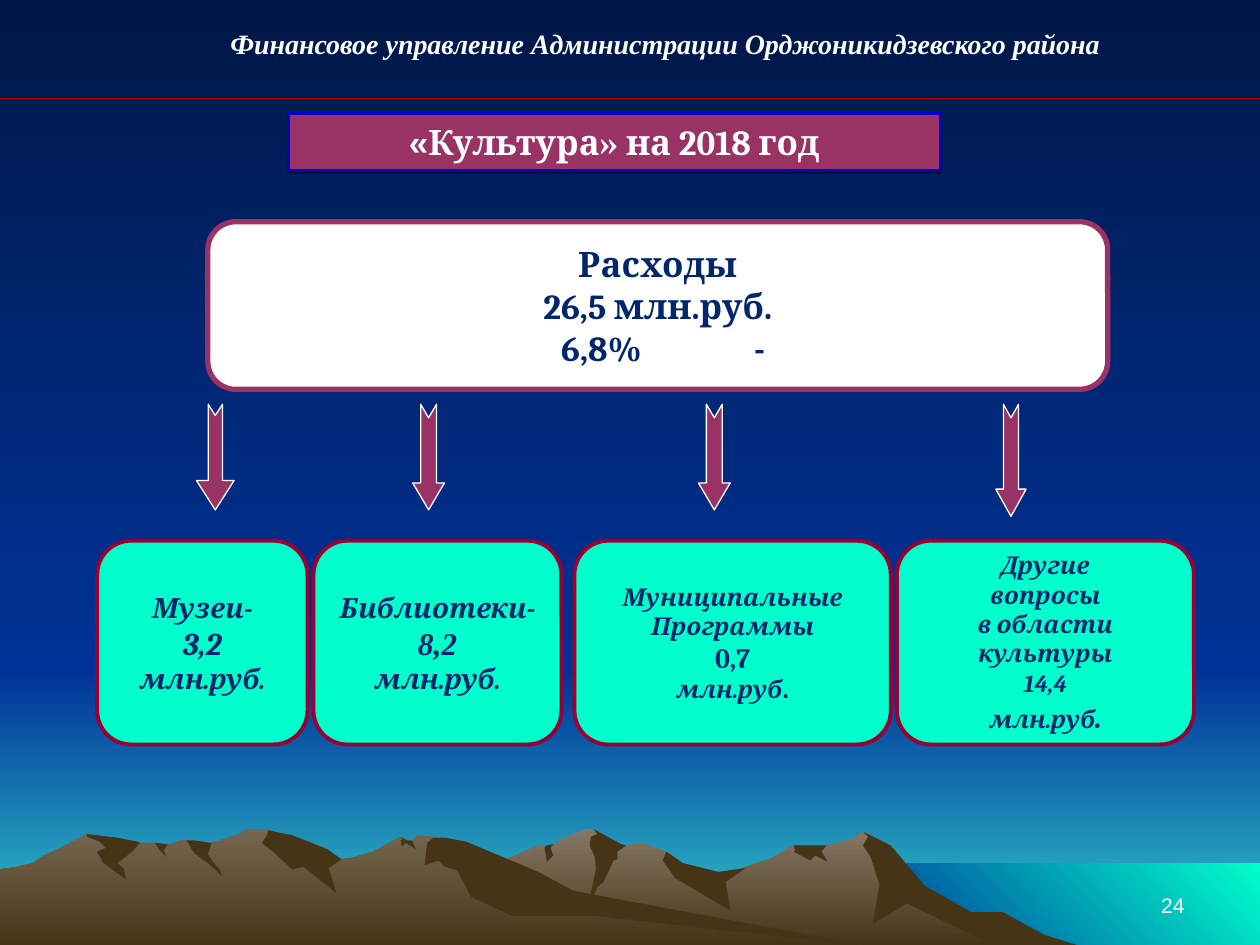
import lxml.etree
import pptx
import pptx.dml.color
import pptx.enum.shapes
import pptx.enum.text
import pptx.oxml.ns
import pptx.util

Cm, Pt = pptx.util.Cm, pptx.util.Pt
RGBColor = pptx.dml.color.RGBColor
Shape = pptx.enum.shapes.MSO_SHAPE
Align = pptx.enum.text.PP_ALIGN
Anchor = pptx.enum.text.MSO_ANCHOR
qn = pptx.oxml.ns.qn

NIGHT = RGBColor(0x00, 0x17, 0x46)
BLUE = RGBColor(0x00, 0x33, 0x99)
TEAL = RGBColor(0x33, 0xCC, 0xCC)
MINT = RGBColor(0x00, 0xFF, 0xCC)
STONE = RGBColor(0x85, 0x78, 0x66)
CLAY = RGBColor(0x75, 0x68, 0x50)
EARTH = RGBColor(0x46, 0x34, 0x16)
WHITE = RGBColor(0xFF, 0xFF, 0xFF)
RED = RGBColor(0xC0, 0x00, 0x00)
PLUM = RGBColor(0x99, 0x33, 0x66)
WINE = RGBColor(0x99, 0x00, 0x33)
ROYAL = RGBColor(0x00, 0x00, 0xCC)
NAVY = RGBColor(0x00, 0x26, 0x6B)

GRID = Cm(0.0254)
FAR = [(802, 90), (778, 77), (764, 73), (723, 48), (702, 21), (685, 10), (676, 16), (656, 21),
       (629, 21), (613, 31), (566, 47), (536, 40), (529, 26), (509, 19), (486, 23), (471, 8),
       (465, 8), (450, 14), (438, 21), (424, 22), (405, 31), (394, 35), (355, 48), (327, 59),
       (277, 89), (258, 101), (821, 101)]
NEAR = [(690, 101), (667, 98), (432, 62), (354, 15), (331, 13), (327, 18), (323, 18), (318, 14),
        (296, 26), (279, 31), (271, 32), (260, 26), (236, 31), (223, 13), (212, 8), (196, 8),
        (189, 12), (178, 16), (160, 21), (148, 17), (143, 17), (132, 21), (123, 19), (111, 19),
        (94, 21), (68, 12), (50, 22), (35, 29), (26, 35), (14, 38), (0, 40), (0, 101)]
FOLDS = [
    [(796, 74), (771, 74), (734, 53), (707, 21), (685, 10), (689, 14), (685, 21), (691, 30),
     (698, 52), (693, 83), (720, 67), (792, 102), (858, 101), (829, 92)],
    [(471, 8), (474, 12), (469, 14), (468, 21), (472, 30), (473, 40), (465, 77), (474, 54),
     (479, 50), (487, 33), (490, 32), (490, 26), (497, 21), (493, 20)],
    [(529, 26), (526, 33), (536, 47), (580, 73), (576, 50), (592, 39), (570, 42), (542, 35)],
    [(650, 21), (630, 21), (631, 25), (630, 26), (643, 33), (647, 29), (657, 34), (652, 26),
     (656, 21)],
    [(433, 27), (432, 23), (434, 21), (439, 20), (437, 23), (439, 29), (434, 34)],
]
RIDGES = [
    [(212, 13), (208, 19), (219, 28), (232, 40), (241, 38), (267, 59), (261, 39), (271, 32),
     (260, 24), (245, 18), (232, 13), (213, 9)],
    [(370, 18), (354, 15), (344, 15), (339, 19), (337, 37), (348, 33), (353, 38), (363, 41),
     (374, 62), (407, 77), (472, 77), (690, 101), (455, 57), (427, 42), (401, 31)],
    [(318, 17), (320, 16), (318, 14), (323, 17), (327, 17), (330, 24), (322, 19), (319, 22)],
    [(154, 17), (168, 19), (165, 28), (169, 34), (175, 41), (176, 45), (165, 35), (154, 27),
     (148, 17)],
    [(133, 20), (130, 25), (132, 30), (127, 25), (123, 19)],
    [(109, 18), (111, 19), (105, 26), (93, 35), (98, 39), (100, 48), (82, 35), (77, 26),
     (84, 23), (79, 18), (69, 14), (69, 12), (94, 15)],
]
CARDS = [
    (1.96, 4.24, ["Музеи-", "3,2", "млн.руб."], [16, 18, 16]),
    (6.32, 5, ["Библиотеки-", "8,2", "млн.руб."], [16, 18, 16]),
    (11.58, 6.38, ["Муниципальные", "Программы", "0,7", "млн.руб"], [14, 14, 16, 14]),
    (18.08, 5.99, ["Другие", "вопросы", "в области", "культуры", "14,4", "млн.руб"], [14] * 6),
]
ARROWS = [(4.34, 2.13, 0.76, 0.38, 0.78), (8.64, 2.13, 0.64, 0.5, 0.85),
          (14.4, 2.13, 0.64, 0.5, 0.85), (20.38, 2.26, 0.61, 0.5, 0.9)]


def paint(shape, fill, line=None, width=0):
    """Give a shape a plain fill, an optional line and no shadow."""
    shape.shadow.inherit = False
    shape.fill.solid()
    shape.fill.fore_color.rgb = fill
    if line is None:
        shape.line.fill.background()
    else:
        shape.line.color.rgb = line
        shape.line.width = Pt(width)


def blend(shape, start, end, angle=270):
    """Fill a shape with a two-colour gradient."""
    paint(shape, end)
    shape.fill.gradient()
    shape.fill.gradient_angle = angle
    for stop, tone in zip(shape.fill.gradient_stops, (start, end)):
        stop.color.rgb = tone


def style(run, size, color, face="Cambria", slant=False, bold=True):
    """Format one run."""
    font = run.font
    font.size, font.name, font.bold, font.italic = Pt(size), face, bold, slant
    font.color.rgb = color


def write(frame, lines, sizes, color, align=Align.CENTER, **look):
    """Set one paragraph for each line and format its run."""
    frame.text = "\n".join(lines)
    for para, size in zip(frame.paragraphs, sizes):
        para.alignment = align
        style(para.runs[0], size, color, **look)


def draw_sky(shapes, left, top, width, height):
    """Draw the two sky bands and the water."""
    parts = [(0, 0, width, 13.54, NIGHT, BLUE, 270),
             (0, 13.54, width, height - 13.54, BLUE, TEAL, 270),
             (17.35, 17.4, width - 17.35, height - 17.4, BLUE, MINT, 45)]
    for x, y, w, h, start, end, angle in parts:
        band = shapes.add_shape(Shape.RECTANGLE, Cm(left + x), Cm(top + y), Cm(w), Cm(h))
        blend(band, start, end, angle)


def draw_hills(shapes, left, top):
    """Draw both mountain chains with their shaded folds."""
    def trace(points):
        form = shapes.build_freeform(*points[0], scale=GRID)
        form.add_line_segments(points[1:])
        return form.convert_to_shape(Cm(left), Cm(top))

    for chain, tone, shades in ((FAR, STONE, FOLDS), (NEAR, CLAY, RIDGES)):
        blend(trace(chain), tone, EARTH)
        for shade in shades:
            paint(trace(shade), EARTH)


def draw_head(shapes, left, top, width):
    """Place the office name over a thin rule."""
    box = shapes.add_textbox(Cm(left + 2.21), Cm(top + 0.41), Cm(22.4), Cm(0.94))
    box.text_frame.word_wrap = True
    write(box.text_frame, ["Финансовое управление Администрации Орджоникидзевского района"],
          [16], WHITE, face="Times New Roman", slant=True)
    y = Cm(top + 1.98)
    rule = shapes.add_connector(pptx.enum.shapes.MSO_CONNECTOR.STRAIGHT,
                                Cm(left), y, Cm(left + width), y)
    rule.line.color.rgb = RED
    rule.line.width = Pt(0.75)
    lxml.etree.SubElement(rule.element.spPr, qn("a:effectLst"))


def draw_title(shapes, left, top, width, height):
    """Turn the title placeholder into a framed banner."""
    title = shapes.title
    title.element.getparent().append(title.element)
    title.left, title.top, title.width, title.height = map(Cm, (left, top, width, height))
    paint(title, PLUM, ROYAL, 1.5)
    glow = title.element.spPr.find(qn("a:effectLst"))
    shade = lxml.etree.SubElement(glow, qn("a:outerShdw"), blurRad="0", dist="20320",
                                  dir="5400000", rotWithShape="0")
    tone = lxml.etree.SubElement(shade, qn("a:srgbClr"), val="000000")
    lxml.etree.SubElement(tone, qn("a:alpha"), val="38000")
    frame = title.text_frame
    frame.vertical_anchor = Anchor.MIDDLE
    write(frame, ["«"], [20], WHITE, face="Arial")
    rest = frame.paragraphs[0].add_run()
    rest.text = "Культура» на 2018 год"
    style(rest, 20, WHITE)


def add_panel(shapes, left, top, width, height, fill, line, weight):
    """Add a rounded panel with centred text and return it."""
    panel = shapes.add_shape(Shape.ROUNDED_RECTANGLE, *map(Cm, (left, top, width, height)))
    panel.adjustments[0] = 0.167
    paint(panel, fill, line, weight)
    panel.text_frame.vertical_anchor = Anchor.MIDDLE
    return panel


def draw_total(shapes, left, top, width, height):
    """Show total spending and its change."""
    frame = add_panel(shapes, left, top, width, height, WHITE, PLUM, 3).text_frame
    frame.margin_left = frame.margin_right = frame.margin_top = frame.margin_bottom = 0
    frame.word_wrap = True
    write(frame, ["Расходы", "26,5 млн.руб.", "-\t6,8%"], [20] * 3, NAVY)
    change = frame.paragraphs[2]
    change.alignment = Align.LEFT
    props = change._p.get_or_add_pPr()
    props.set("marL", str(Cm(11.51)))
    props.set("indent", str(Cm(-0.66)))


def draw_arrows(shapes, left, top):
    """Point four notched arrows down from the total."""
    for mid, size, thick, shaft, tip in ARROWS:
        arrow = shapes.add_shape(Shape.NOTCHED_RIGHT_ARROW, Cm(left + mid - size / 2),
                                 Cm(top + (size - thick) / 2), Cm(size), Cm(thick))
        arrow.rotation = 90
        arrow.adjustments[0], arrow.adjustments[1] = shaft, tip
        paint(arrow, PLUM, WHITE, 0.75)


def draw_cards(shapes, left, top, height):
    """Set out the spending cards in a row."""
    frames = []
    for x, width, lines, sizes in CARDS:
        frame = add_panel(shapes, left + x, top, width, height, MINT, WINE, 2.25).text_frame
        frame.word_wrap = False
        write(frame, lines, sizes, NAVY, slant=True)
        frames.append(frame)
    frames[1].paragraphs[1].runs[0].font.name = "Times New Roman"
    frames[2].paragraphs[2].runs[0].font.italic = False
    for frame, size, face, slant in ((frames[2], 14, "Arial", False),
                                     (frames[3], 18, "Cambria", True)):
        dot = frame.paragraphs[-1].add_run()
        dot.text = "."
        style(dot, size, NAVY, face, slant)


def draw_page(shapes, left, top, width, height):
    """Place the page number."""
    frame = shapes.add_textbox(*map(Cm, (left, top, width, height))).text_frame
    frame.word_wrap = True
    frame.vertical_anchor = Anchor.BOTTOM
    write(frame, ["24"], [12], WHITE, Align.RIGHT, face="Arial", bold=False)


def main():
    """Build and save the slide."""
    deck = pptx.Presentation()
    deck.slide_width, deck.slide_height = Cm(25.4), Cm(19.05)
    shapes = deck.slides.add_slide(deck.slide_layouts[5]).shapes
    draw_sky(shapes, 0, 0, 25.4, 19.05)
    draw_hills(shapes, 0, 16.51)
    draw_page(shapes, 18.21, 17.35, 5.92, 1.27)
    draw_head(shapes, 0, 0, 25.4)
    draw_title(shapes, 5.82, 2.29, 13.13, 1.14)
    draw_total(shapes, 4.19, 4.47, 18.14, 3.38)
    draw_cards(shapes, 0, 10.9, 4.11)
    draw_arrows(shapes, 0, 8.15)
    deck.save("out.pptx")


if __name__ == "__main__":
    main()
